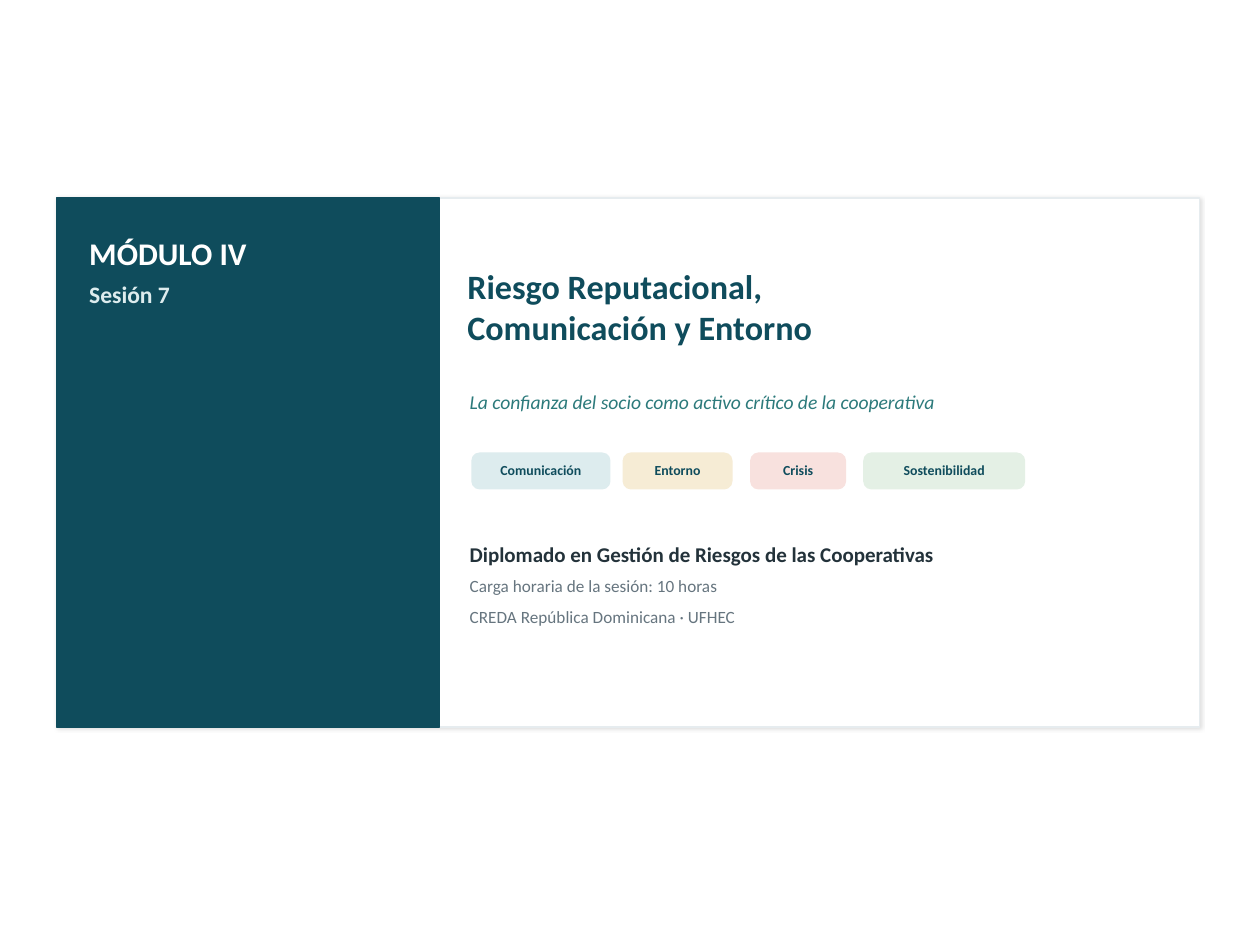
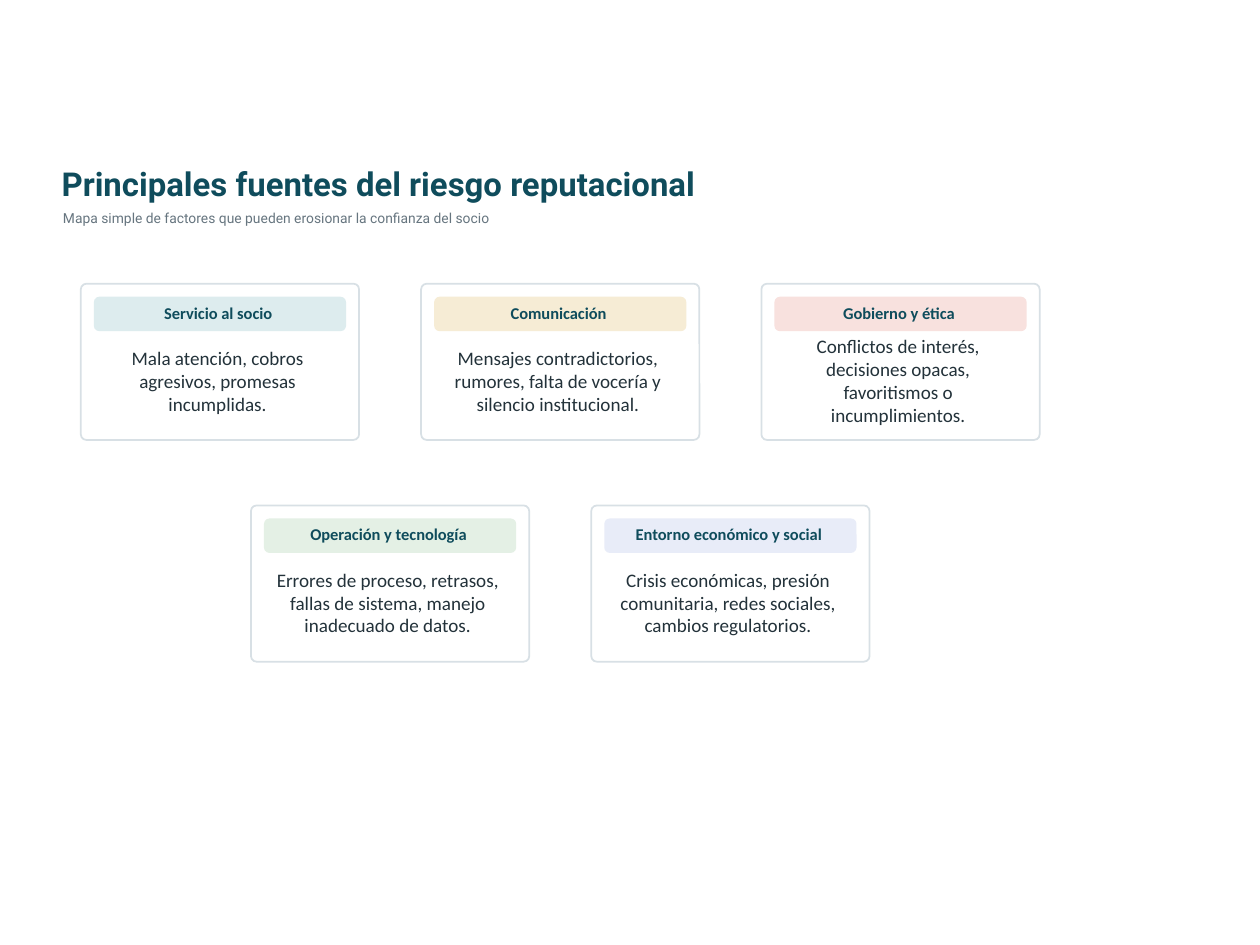
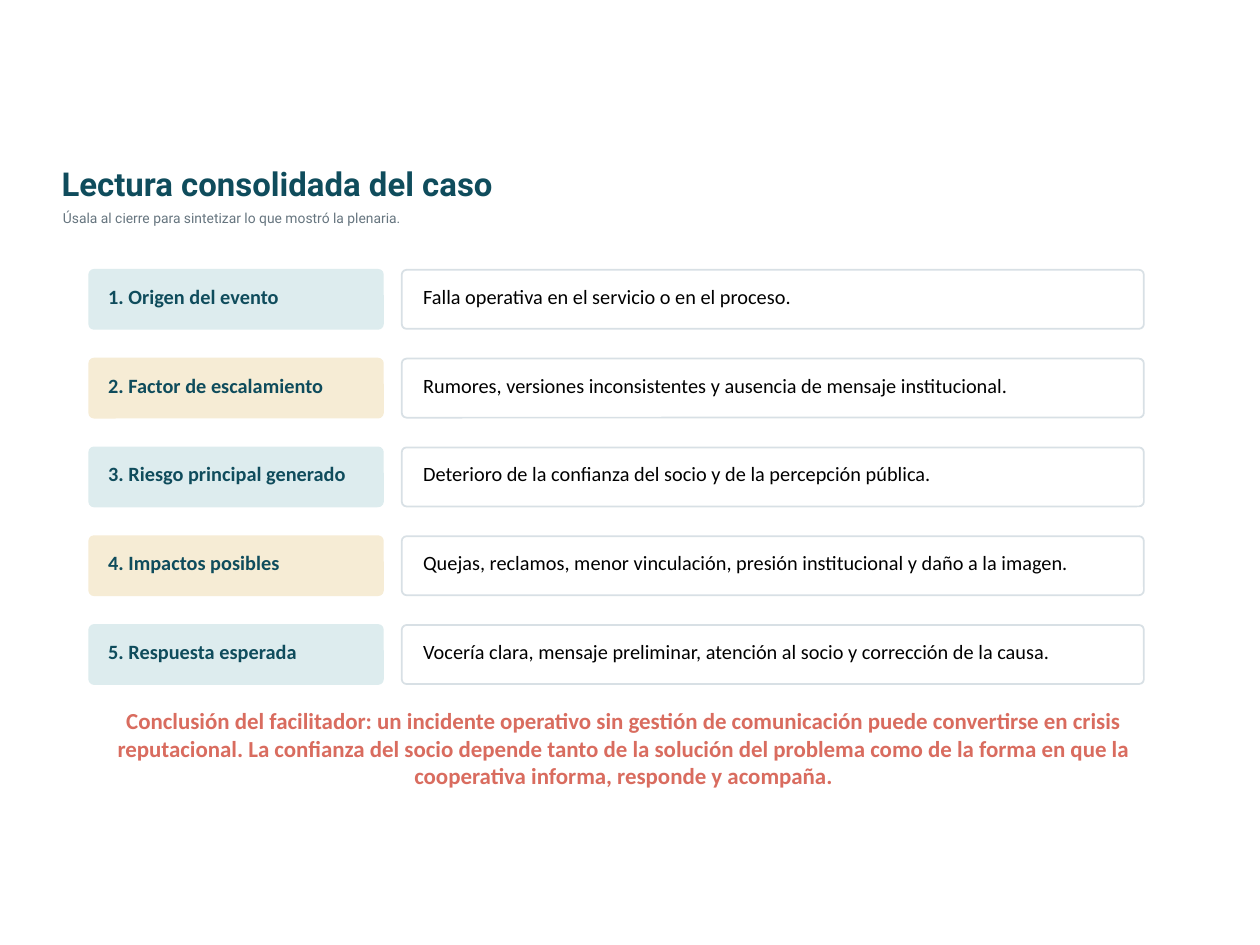
import pptx
import pptx.dml.color
import pptx.enum.shapes
import pptx.enum.text
import pptx.oxml
import pptx.oxml.ns
import pptx.util

Cm = pptx.util.Cm
SHAPE = pptx.enum.shapes.MSO_SHAPE
ALIGN = pptx.enum.text.PP_ALIGN

WHITE, BLACK = "FFFFFF", "000000"
PETROL, TEAL, INK, GREY, CORAL = "0F4C5C", "2C7A7B", "23323A", "66757F", "D96C5F"
AQUA, SAND, ROSE, MINT, LILAC = "DDECEE", "F6ECD5", "F8E1DE", "E4F0E5", "E8ECF8"
PANEL_EDGE, CARD_EDGE = "E6ECEF", "D8E0E5"
BODY_FONT, HEAD_FONT = "Calibri", "Roboto"

# Cover: (text, box in cm, size, colour, style)
COVER_TITLE = ["Riesgo Reputacional,", "Comunicación y Entorno"]
COVER_TEXTS = [
    ("MÓDULO IV", (1.8, 4.72, 4.78, 0.76), 18, WHITE, {"bold": True}),
    ("Sesión 7", (1.8, 5.59, 4.19, 0.66), 13.5, AQUA, {"bold": True}),
    ("La confianza del socio como activo crítico de la cooperativa",
     (9.47, 7.75, 11.23, 0.71), 11.2, TEAL, {"italic": True}),
    ("Diplomado en Gestión de Riesgos de las Cooperativas",
     (9.47, 10.87, 11.05, 0.61), 12, INK, {"bold": True}),
    ("Carga horaria de la sesión: 10 horas", (9.47, 11.56, 6.86, 0.48), 9.8, GREY, {}),
    ("CREDA República Dominicana · UFHEC", (9.47, 12.19, 7.82, 0.48), 9.8, GREY, {}),
]
# (topic, left, width, colour)
CHIPS = [
    ("Comunicación", 9.52, 2.77, AQUA),
    ("Entorno", 12.57, 2.18, SAND),
    ("Crisis", 15.14, 1.9, ROSE),
    ("Sostenibilidad", 17.42, 3.23, MINT),
]

SOURCE_ROWS = [
    [("Servicio al socio", AQUA, "Mala atención, cobros agresivos, promesas incumplidas."),
     ("Comunicación", SAND,
      "Mensajes contradictorios, rumores, falta de vocería y silencio institucional."),
     ("Gobierno y ética", ROSE,
      "Conflictos de interés, decisiones opacas, favoritismos o incumplimientos.")],
    [("Operación y tecnología", MINT,
      "Errores de proceso, retrasos, fallas de sistema, manejo inadecuado de datos."),
     ("Entorno económico y social", LILAC,
      "Crisis económicas, presión comunitaria, redes sociales, cambios regulatorios.")],
]

CASE_STEPS = [
    ("Origen del evento", "Falla operativa en el servicio o en el proceso."),
    ("Factor de escalamiento",
     "Rumores, versiones inconsistentes y ausencia de mensaje institucional."),
    ("Riesgo principal generado",
     "Deterioro de la confianza del socio y de la percepción pública."),
    ("Impactos posibles",
     "Quejas, reclamos, menor vinculación, presión institucional y daño a la imagen."),
    ("Respuesta esperada",
     "Vocería clara, mensaje preliminar, atención al socio y corrección de la causa."),
]
CONCLUSION = (
    "Conclusión del facilitador: un incidente operativo sin gestión de comunicación puede "
    "convertirse en crisis reputacional. La confianza del socio depende tanto de la solución "
    "del problema como de la forma en que la cooperativa informa, responde y acompaña."
)


def rgb(value):
    return pptx.dml.color.RGBColor.from_string(value)


def write(sp, lines, size, color, bold=False, italic=False, align=ALIGN.LEFT, font=BODY_FONT):
    tf = sp.text_frame
    tf.word_wrap = True
    tf.auto_size = pptx.enum.text.MSO_AUTO_SIZE.NONE
    tf.vertical_anchor = pptx.enum.text.MSO_ANCHOR.MIDDLE
    tf.margin_left = tf.margin_top = tf.margin_right = tf.margin_bottom = 0
    for i, line in enumerate(lines):
        p = tf.add_paragraph() if i else tf.paragraphs[0]
        p.alignment = align
        r = p.add_run()
        r.text = line
        r.font.name = font
        r.font.size = pptx.util.Pt(size)
        r.font.bold = bold
        r.font.italic = italic
        r.font.color.rgb = rgb(color)


def add_text(slide, text, box, size, color, **style):
    sp = slide.shapes.add_textbox(*map(Cm, box))
    write(sp, [text], size, color, **style)


def add_box(slide, box, fill, edge=None, radius=None):
    """Filled rectangle; radius is the corner adjustment of a rounded one."""
    kind = SHAPE.RECTANGLE if radius is None else SHAPE.ROUNDED_RECTANGLE
    sp = slide.shapes.add_shape(kind, *map(Cm, box))
    sp.shadow.inherit = False
    sp.fill.solid()
    sp.fill.fore_color.rgb = rgb(fill)
    sp.line.color.rgb = rgb(edge or fill)
    sp.line.width = pptx.util.Pt(1)
    if radius is not None:
        sp.adjustments[0] = radius
    return sp


def add_soft_shadow(sp):
    effects = sp._element.spPr.find(pptx.oxml.ns.qn("a:effectLst"))
    effects.append(pptx.oxml.parse_xml(
        f'<a:outerShdw {pptx.oxml.ns.nsdecls("a")} blurRad="25400" dist="12700" dir="2700000" '
        'algn="ctr" rotWithShape="0"><a:srgbClr val="000000"><a:alpha val="12000"/>'
        '</a:srgbClr></a:outerShdw>'))


def add_title(slide, lines, box, size, font):
    sp = slide.shapes.title
    sp.left, sp.top, sp.width, sp.height = map(Cm, box)
    write(sp, lines, size, PETROL, bold=True, font=font)
    slide.shapes._spTree.append(sp._element)  # in front of what is already drawn


def new_slide(prs):
    return prs.slides.add_slide(prs.slide_layouts[5])


def content_slide(prs, title, subtitle):
    slide = new_slide(prs)
    add_title(slide, [title], (1.24, 3.3, 16.94, 0.81), 18.8, HEAD_FONT)
    add_text(slide, subtitle, (1.27, 4.17, 16.21, 0.46), 7.9, GREY, font=HEAD_FONT)
    return slide


def cover(prs):
    slide = new_slide(prs)
    left, top, width, height = 1.14, 3.99, 23.04, 10.67
    panel = add_box(slide, (left, top, width, height), WHITE, PANEL_EDGE)
    add_soft_shadow(panel)
    add_box(slide, (left, top, 7.72, height), PETROL)
    add_title(slide, COVER_TITLE, (9.42, 4.9, 12.78, 2.57), 19.5, BODY_FONT)
    for text, box, size, color, style in COVER_TEXTS:
        add_text(slide, text, box, size, color, **style)
    chip_top, inset = 9.14, 0.15
    for topic, x, w, color in CHIPS:
        add_box(slide, (x, chip_top, w, 0.71), color, radius=0.211)
        add_text(slide, topic, (x + inset, chip_top + inset, w - 2 * inset, 0.36), 7.9, PETROL,
                 bold=True, align=ALIGN.CENTER)


def risk_sources(prs):
    slide = content_slide(prs, "Principales fuentes del riesgo reputacional",
                          "Mapa simple de factores que pueden erosionar la confianza del socio")
    step_x, step_y = 6.86, 4.47
    for row, cards in enumerate(SOURCE_ROWS):
        y = 5.72 + row * step_y
        first_x = 1.63 + (len(SOURCE_ROWS[0]) - len(cards)) * step_x / 2
        for col, (name, color, detail) in enumerate(cards):
            x = first_x + col * step_x
            add_box(slide, (x, y, 5.61, 3.15), WHITE, CARD_EDGE, 0.036)
            add_box(slide, (x + 0.28, y + 0.28, 5.05, 0.66), color, radius=0.143)
            add_text(slide, name, (x + 0.41, y + 0.43, 4.72, 0.3), 9.4, PETROL,
                     bold=True, align=ALIGN.CENTER)
            add_text(slide, detail, (x + 0.33, y + 1.18, 4.85, 1.55), 10.9, INK,
                     align=ALIGN.CENTER)


def case_reading(prs):
    slide = content_slide(prs, "Lectura consolidada del caso",
                          "Úsala al cierre para sintetizar lo que mostró la plenaria.")
    height, radius = 1.19, 0.081
    for i, (step, finding) in enumerate(CASE_STEPS):
        y = 5.44 + i * 1.79
        add_box(slide, (1.8, y, 5.92, height), (AQUA, SAND)[i % 2], radius=radius)
        add_text(slide, f"{i + 1}. {step}", (2.18, y + 0.38, 5.13, 0.3), 11.6, PETROL, bold=True)
        add_box(slide, (8.1, y, 14.96, height), WHITE, CARD_EDGE, radius)
        add_text(slide, finding, (8.53, y + 0.34, 14, 0.38), 11.6, BLACK)
    add_text(slide, CONCLUSION, (1.9, 14.68, 21.34, 0.81), 13.1, CORAL,
             bold=True, align=ALIGN.CENTER)


def main():
    prs = pptx.Presentation()
    prs.slide_width, prs.slide_height = Cm(25.4), Cm(19.05)
    cover(prs)
    risk_sources(prs)
    case_reading(prs)
    prs.save("out.pptx")


if __name__ == "__main__":
    main()
